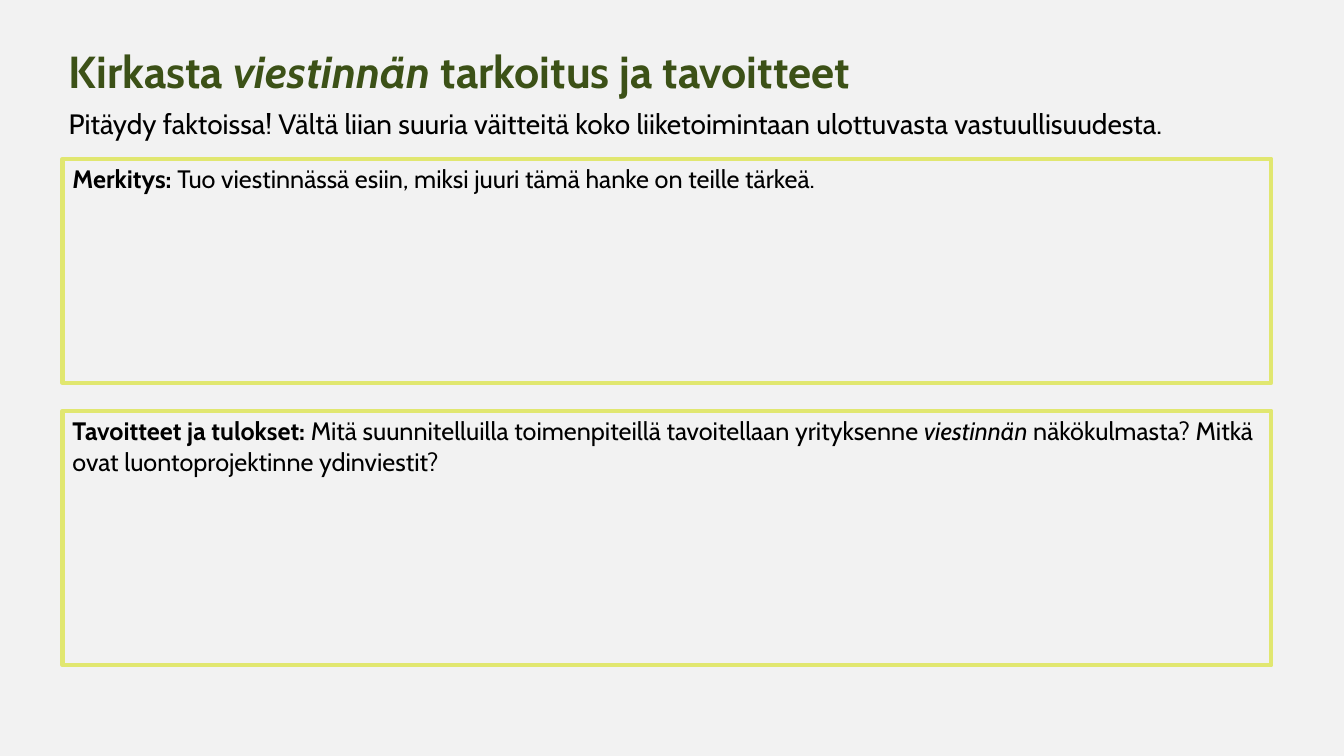
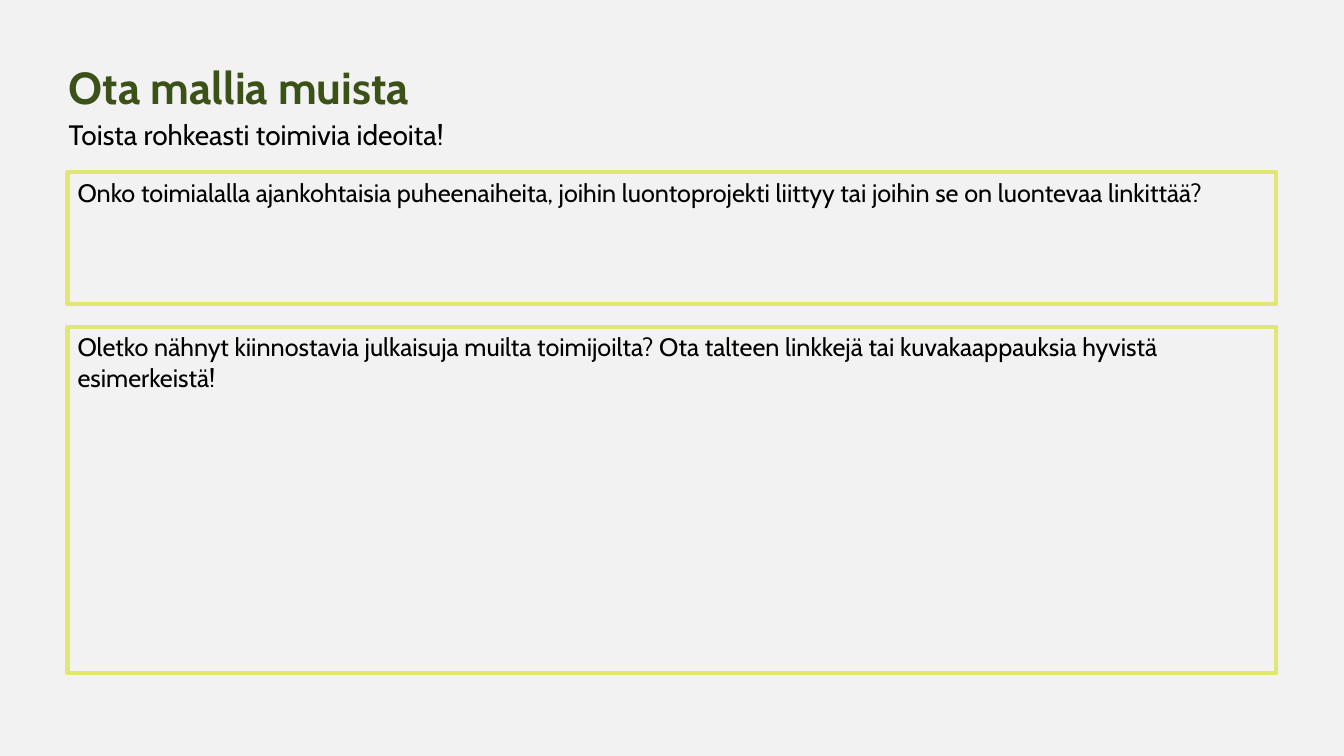
from dataclasses import dataclass
from pptx import Presentation
from pptx.dml.color import RGBColor
from pptx.enum.shapes import MSO_SHAPE as Preset
from pptx.enum.text import MSO_ANCHOR as Anchor, PP_ALIGN as Align
from pptx.shapes.autoshape import Shape
from pptx.slide import Slide
from pptx.util import Inches, Pt

SLIDE_WIDTH, SLIDE_HEIGHT = Inches(13.333), Inches(7.5)
COLUMNS, ROWS = 160, 90


@dataclass(frozen=True)
class Theme:
    font: str = "Cabin"
    background: RGBColor = RGBColor(0xF2, 0xF2, 0xF2)
    heading: RGBColor = RGBColor(0x3C, 0x51, 0x17)
    body: RGBColor = RGBColor(0, 0, 0)
    frame: RGBColor = RGBColor(0xE1, 0xE7, 0x70)
    frame_width: float = 3
    title_size: float = 32
    lead_size: float = 20
    prompt_size: float = 18
    heading_spacing: float = 0.9


@dataclass(frozen=True)
class Words:
    text: str
    bold: bool = False
    italic: bool = False


@dataclass(frozen=True)
class Area:
    column: float
    row: float
    columns: float
    rows: float

    def emu(self) -> tuple[int, int, int, int]:
        across, down = SLIDE_WIDTH / COLUMNS, SLIDE_HEIGHT / ROWS
        return (round(self.column * across), round(self.row * down),
                round(self.columns * across), round(self.rows * down))


@dataclass(frozen=True)
class Prompt:
    row: float
    rows: float
    words: tuple[Words, ...]


@dataclass(frozen=True)
class Worksheet:
    title_row: float
    title: tuple[Words, ...]
    lead_row: float
    lead: str
    prompt_column: float
    prompts: tuple[Prompt, ...]


THEME = Theme()
HEADING_COLUMN, HEADING_COLUMNS = 7, 145
TITLE_ROWS, LEAD_ROWS = 12.6, 6.5
PROMPT_COLUMNS = 143.9

WORKSHEETS = (
    Worksheet(
        2.5,
        (Words("Kirkasta ", bold=True),
         Words("viestinnän", bold=True, italic=True),
         Words(" tarkoitus ja tavoitteet", bold=True)),
        12.6,
        "Pitäydy faktoissa! Vältä liian suuria väitteitä koko "
        "liiketoimintaan ulottuvasta vastuullisuudesta.",
        7.45,
        (Prompt(18.9, 26.7, (
            Words("Merkitys: ", bold=True),
            Words("Tuo viestinnässä esiin, miksi juuri tämä hanke on "
                  "teille tärkeä."))),
         Prompt(48.9, 30.3, (
             Words("Tavoitteet ja tulokset: ", bold=True),
             Words("Mitä suunnitelluilla toimenpiteillä tavoitellaan "
                   "yrityksenne "),
             Words("viestinnän", italic=True),
             Words(" näkökulmasta? Mitkä ovat luontoprojektinne "
                   "ydinviestit?")))),
    ),
    Worksheet(
        4.4,
        (Words("Ota mallia muista", bold=True),),
        13.8,
        "Toista rohkeasti toimivia ideoita!",
        8.05,
        (Prompt(20.5, 15.7, (
            Words("Onko toimialalla ajankohtaisia puheenaiheita, joihin "
                  "luontoprojekti liittyy tai joihin se on luontevaa "
                  "linkittää?"),)),
         Prompt(38.9, 41.2, (
             Words("Oletko nähnyt kiinnostavia julkaisuja muilta "
                   "toimijoilta? Ota talteen linkkejä tai kuvakaappauksia "
                   "hyvistä esimerkeistä!"),))),
    ),
)


def write(holder: Shape, words: tuple[Words, ...], size: float,
          color: RGBColor, anchor: Anchor = Anchor.TOP,
          spacing: float = 1.0) -> None:
    frame = holder.text_frame
    frame.word_wrap = True
    frame.vertical_anchor = anchor
    paragraph = frame.paragraphs[0]
    paragraph.alignment = Align.LEFT
    paragraph.line_spacing = spacing
    for part in words:
        run = paragraph.add_run()
        run.text = part.text
        run.font.name = THEME.font
        run.font.size = Pt(size)
        run.font.color.rgb = color
        run.font.bold = part.bold
        run.font.italic = part.italic


def draw_heading(slide: Slide, sheet: Worksheet) -> None:
    title = slide.shapes.add_textbox(*Area(
        HEADING_COLUMN, sheet.title_row, HEADING_COLUMNS, TITLE_ROWS).emu())
    write(title, sheet.title, THEME.title_size, THEME.heading,
          Anchor.MIDDLE, THEME.heading_spacing)
    lead = slide.shapes.add_textbox(*Area(
        HEADING_COLUMN, sheet.lead_row, HEADING_COLUMNS, LEAD_ROWS).emu())
    write(lead, (Words(sheet.lead),), THEME.lead_size, THEME.body,
          spacing=THEME.heading_spacing)


def draw_prompt(slide: Slide, column: float, prompt: Prompt) -> None:
    answer_area = slide.shapes.add_shape(Preset.RECTANGLE, *Area(
        column, prompt.row, PROMPT_COLUMNS, prompt.rows).emu())
    answer_area.shadow.inherit = False
    answer_area.fill.background()
    answer_area.line.color.rgb = THEME.frame
    answer_area.line.width = Pt(THEME.frame_width)
    write(answer_area, prompt.words, THEME.prompt_size, THEME.body)


def main() -> None:
    deck = Presentation()
    deck.slide_width, deck.slide_height = SLIDE_WIDTH, SLIDE_HEIGHT
    for sheet in WORKSHEETS:
        slide = deck.slides.add_slide(deck.slide_layouts[6])
        slide.background.fill.solid()
        slide.background.fill.fore_color.rgb = THEME.background
        draw_heading(slide, sheet)
        for prompt in sheet.prompts:
            draw_prompt(slide, sheet.prompt_column, prompt)
    deck.save("out.pptx")


if __name__ == "__main__":
    main()
